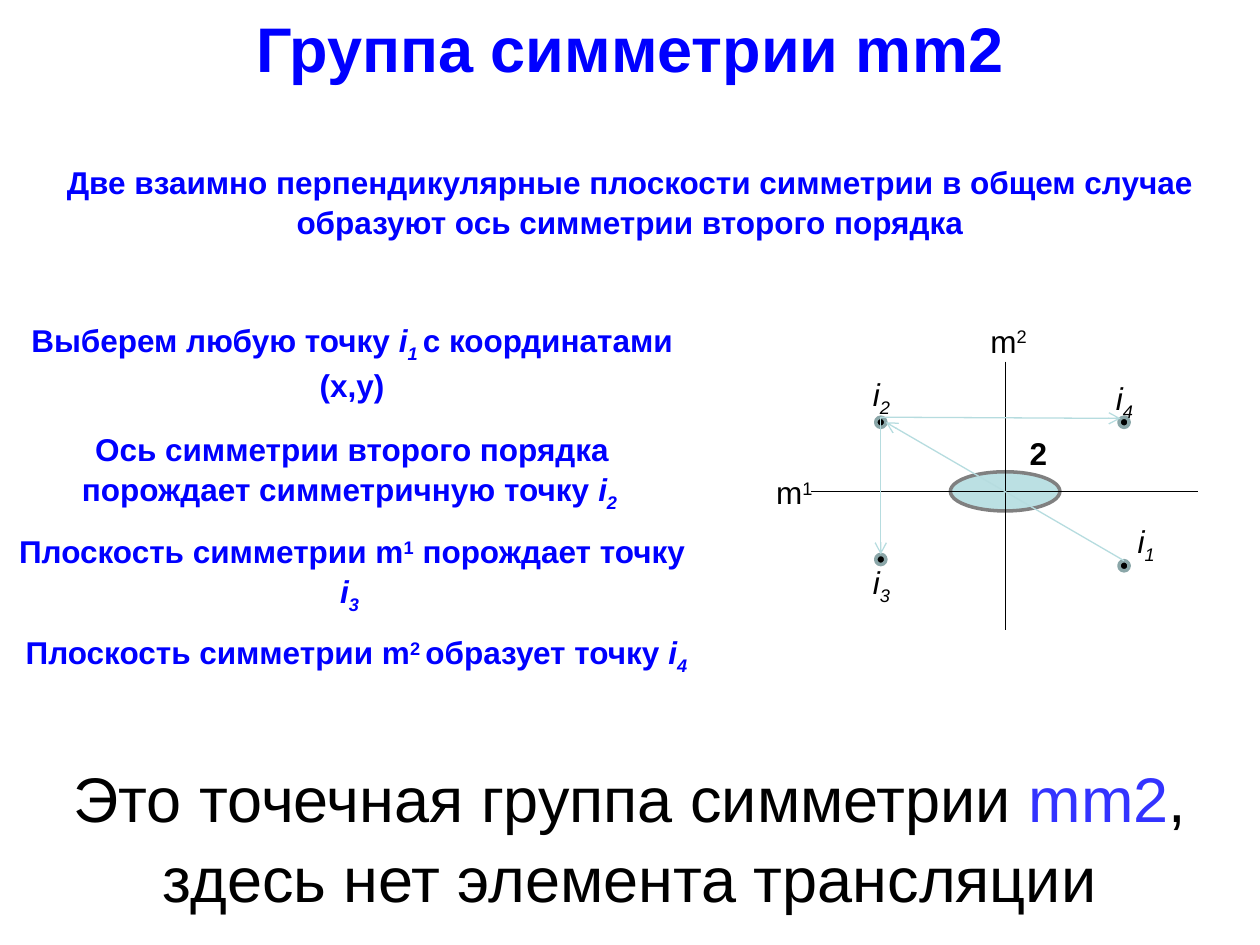
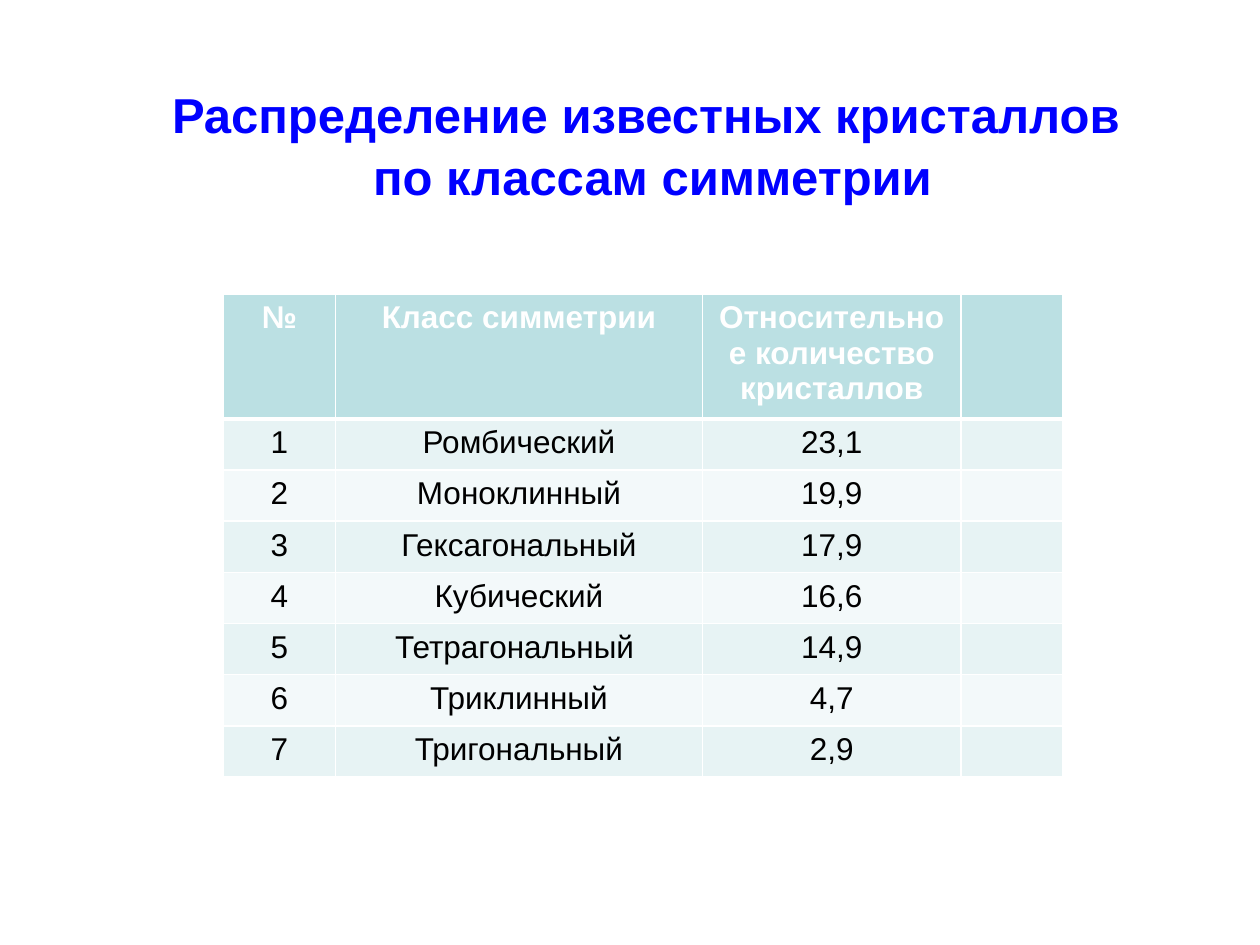
from lxml.etree import SubElement
from pptx import Presentation
from pptx.dml.color import RGBColor
from pptx.enum.shapes import MSO_CONNECTOR, MSO_SHAPE
from pptx.enum.text import MSO_ANCHOR, MSO_AUTO_SIZE, PP_ALIGN
from pptx.oxml import parse_xml
from pptx.oxml.ns import nsdecls, qn
from pptx.util import Pt

FONT = "Arial"
WHITE, BLACK, BLUE, VIOLET = "FFFFFF", "000000", "0000FF", "3333FF"
AQUA, ARROW, DOT_RING, GREY = "BBE0E3", "B6DCDF", "8AA6A8", "808080"
BANDS = ("E7F3F4", "F3F9FA")
SLIDE_WIDTH, SLIDE_HEIGHT = 720, 540

# Run styles: plain, subscript, superscript, italic, italic subscript
PLAIN, SUPERSCRIPT = {}, {"baseline": 30}
ITALIC, INDEX = {"italic": True}, {"italic": True, "baseline": -25}


def color(value):
    return RGBColor.from_string(value)


def points(*values):
    return [Pt(value) for value in values]


def write(frame, paragraphs, size=18, ink=BLACK, bold=False, spacing=None):
    """Fill a frame; each paragraph is a string or a list of (text, style) runs."""
    for number, content in enumerate(paragraphs):
        paragraph = frame.add_paragraph() if number else frame.paragraphs[0]
        paragraph.alignment = PP_ALIGN.CENTER
        if spacing:
            paragraph.line_spacing = spacing
        runs = [(content, PLAIN)] if isinstance(content, str) else content
        for text, style in runs:
            run = paragraph.add_run()
            run.text = text
            run.font.name, run.font.size, run.font.bold = FONT, Pt(size), bold
            run.font.italic = style.get("italic", False)
            run.font.color.rgb = color(style.get("ink", ink))
            if "baseline" in style:
                run._r.get_or_add_rPr().set("baseline", str(style["baseline"] * 1000))


def add_figure(slide, kind, box, fill, outline=None):
    shape = slide.shapes.add_shape(kind, *points(*box))
    shape.shadow.inherit = False
    shape.fill.solid()
    shape.fill.fore_color.rgb = color(fill)
    if outline:
        shape.line.color.rgb = color(outline)
        shape.line.width = Pt(2)
    else:
        shape.line.fill.background()
    return shape


def add_text(slide, box, *paragraphs, filled=True, wrap=True, **style):
    if filled:
        shape = add_figure(slide, MSO_SHAPE.RECTANGLE, box, WHITE)
    else:
        shape = slide.shapes.add_textbox(*points(*box))
    frame = shape.text_frame
    frame.word_wrap = wrap
    frame.vertical_anchor = MSO_ANCHOR.TOP
    frame.auto_size = MSO_AUTO_SIZE.SHAPE_TO_FIT_TEXT
    write(frame, paragraphs, spacing=1.05, **style)


def add_line(slide, start, end, ink, arrow=False):
    line = slide.shapes.add_connector(MSO_CONNECTOR.STRAIGHT, *points(*start, *end))
    line.line.color.rgb = color(ink)
    line.line.width = Pt(0.75)
    if arrow:
        SubElement(line.line._get_or_add_ln(), qn("a:tailEnd"), type="arrow")
    SubElement(line._element.spPr, qn("a:effectLst"))


def add_explanation(slide, left, top, width):
    """Steps that derive the points i2, i3 and i4 from i1."""
    steps = [
        (0, [("Выберем любую точку ", PLAIN), ("i", ITALIC), ("1 ", INDEX),
             ("с координатами (x,y)", PLAIN)]),
        (62.6, [("Ось симметрии второго порядка порождает симметричную точку ", PLAIN),
                ("i", ITALIC), ("2 ", INDEX)]),
        (121, [("Плоскость симметрии m", PLAIN), ("1", SUPERSCRIPT),
               (" порождает точку ", PLAIN), ("i", ITALIC), ("3 ", INDEX)]),
    ]
    for offset, runs in steps:
        add_text(slide, (left, top + offset, width, 51), runs, ink=BLUE, bold=True)
    last_step = [("Плоскость симметрии m", PLAIN), ("2 ", SUPERSCRIPT),
                 ("образует точку ", PLAIN), ("i", ITALIC), ("4", INDEX)]
    add_text(slide, (left + 1.5, top + 178.6, width + 2, 28.8), last_step,
             wrap=False, ink=BLUE, bold=True)


def add_symmetry_diagram(slide, left, top, width, height):
    """Two mirror planes, the twofold axis and the four equivalent points."""
    def at(x, y):
        return left + x, top + y

    add_figure(slide, MSO_SHAPE.RECTANGLE, (left, top, width, height), WHITE)
    axis_x, axis_y = 157.7, 101.5
    add_figure(slide, MSO_SHAPE.OVAL,
               (*at(axis_x - 31.5, axis_y - 11.2), 62.6, 22.4), AQUA, GREY)
    add_line(slide, at(axis_x, 27.3), at(axis_x, 180.7), BLACK)
    add_line(slide, at(46.8, axis_y), at(267.8, axis_y), BLACK)

    radius = 2.9
    near, far, upper = 86.4, 225.4, 62
    for x, y in [(far, 144), (near, upper), (near, 140.4), (far, upper)]:
        add_figure(slide, MSO_SHAPE.OVAL,
                   (*at(x - radius, y - radius), 2 * radius, 2 * radius), BLACK, DOT_RING)
    second_top = (near, upper - radius)
    arrows = [((far, 144 - radius), (near + radius, upper)),
              (second_top, (near, 140.4 - radius)),
              (second_top, (far - 2, upper - 2.2))]
    for start, end in arrows:
        add_line(slide, at(*start), at(*end), ARROW, arrow=True)

    add_text(slide, (*at(164.2, 64), 24.5, 28.8), "2", filled=False, wrap=False, bold=True)
    labels = [(18.7, 86.4, 36.7, "m", "1"), (141.1, 0, 36.7, "m", "2"),
              (225.4, 114.5, 25.2, "i", "1"), (74.2, 30.2, 25.2, "i", "2"),
              (74.2, 137.5, 25.2, "i", "3"), (213, 32.4, 25.2, "i", "4")]
    for x, y, label_width, letter, number in labels:
        styles = (ITALIC, INDEX) if letter == "i" else (PLAIN, SUPERSCRIPT)
        add_text(slide, (*at(x, y), label_width, 28.8),
                 list(zip((letter, number), styles)), filled=False, wrap=False)


def set_borders(cell, bottom):
    properties = cell._tc.get_or_add_tcPr()
    for index, (side, weight) in enumerate(zip("LRTB", (1, 1, 1, bottom))):
        properties.insert(index, parse_xml(
            f'<a:ln{side} {nsdecls("a")} w="{Pt(weight)}"><a:solidFill>'
            f'<a:srgbClr val="{WHITE}"/></a:solidFill></a:ln{side}>'))


def add_crystal_table(slide, left, top):
    rows = [
        ("№", "Класс симметрии", "Относительное количество кристаллов", ""),
        ("1", "Ромбический", "23,1", ""),
        ("2", "Моноклинный", "19,9", ""),
        ("3", "Гексагональный", "17,9", ""),
        ("4", "Кубический", "16,6", ""),
        ("5", "Тетрагональный ", "14,9", ""),
        ("6", "Триклинный", "4,7", ""),
        ("7", "Тригональный", "2,9", ""),
    ]
    widths = (64, 209.8, 147.6, 58.3)
    heights = [71.4] + [29.25] * (len(rows) - 1)
    table = slide.shapes.add_table(
        len(rows), len(widths), *points(left, top, sum(widths), sum(heights))).table
    for column, column_width in zip(table.columns, widths):
        column.width = Pt(column_width)
    for number, (texts, height) in enumerate(zip(rows, heights)):
        header = number == 0
        table.rows[number].height = Pt(height)
        for cell, text in zip(table.rows[number].cells, texts):
            cell.fill.solid()
            cell.fill.fore_color.rgb = color(AQUA if header else BANDS[(number - 1) % 2])
            set_borders(cell, bottom=3 if header else 1)
            if text:
                write(cell.text_frame, [text], ink=WHITE if header else BLACK, bold=header)


def build_group_slide(slide):
    add_text(slide, (0, 0, SLIDE_WIDTH, 51), "Группа симметрии mm2",
             size=36, ink=BLUE, bold=True)
    add_text(slide, (0, 88.6, SLIDE_WIDTH, 51),
             "Две взаимно перпендикулярные плоскости симметрии в общем случае "
             "образуют ось симметрии второго порядка", ink=BLUE, bold=True)
    add_explanation(slide, -1.5, 178.6, 405.4)
    add_text(slide, (0, 428.4, SLIDE_WIDTH, 94.3),
             [("Это точечная группа симметрии ", PLAIN), ("mm2", {"ink": VIOLET}),
              (", здесь нет элемента трансляции", PLAIN)], size=36)
    add_symmetry_diagram(slide, 416.9, 179.3, 300.2, 203)


def build_distribution_slide(slide):
    add_crystal_table(slide, 127.7, 168)
    add_text(slide, (87.8, 43.2, 570.2, 74.9), "Распределение известных кристаллов ",
             "по классам симметрии", wrap=False, size=28, ink=BLUE, bold=True)


def main():
    presentation = Presentation()
    presentation.slide_width, presentation.slide_height = points(SLIDE_WIDTH, SLIDE_HEIGHT)
    blank = presentation.slide_layouts[6]
    for build in (build_group_slide, build_distribution_slide):
        build(presentation.slides.add_slide(blank))
    presentation.save("out.pptx")


if __name__ == "__main__":
    main()
